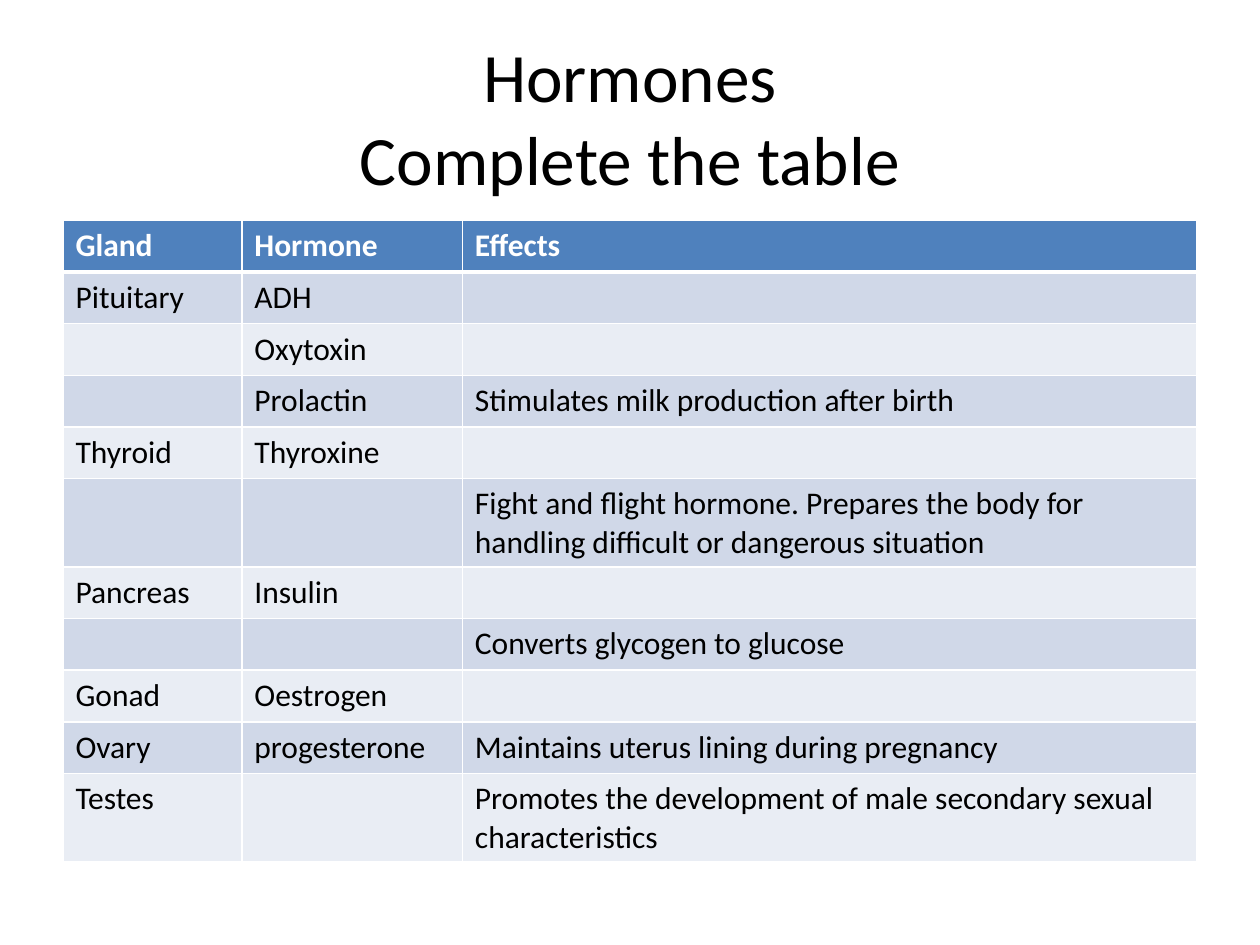
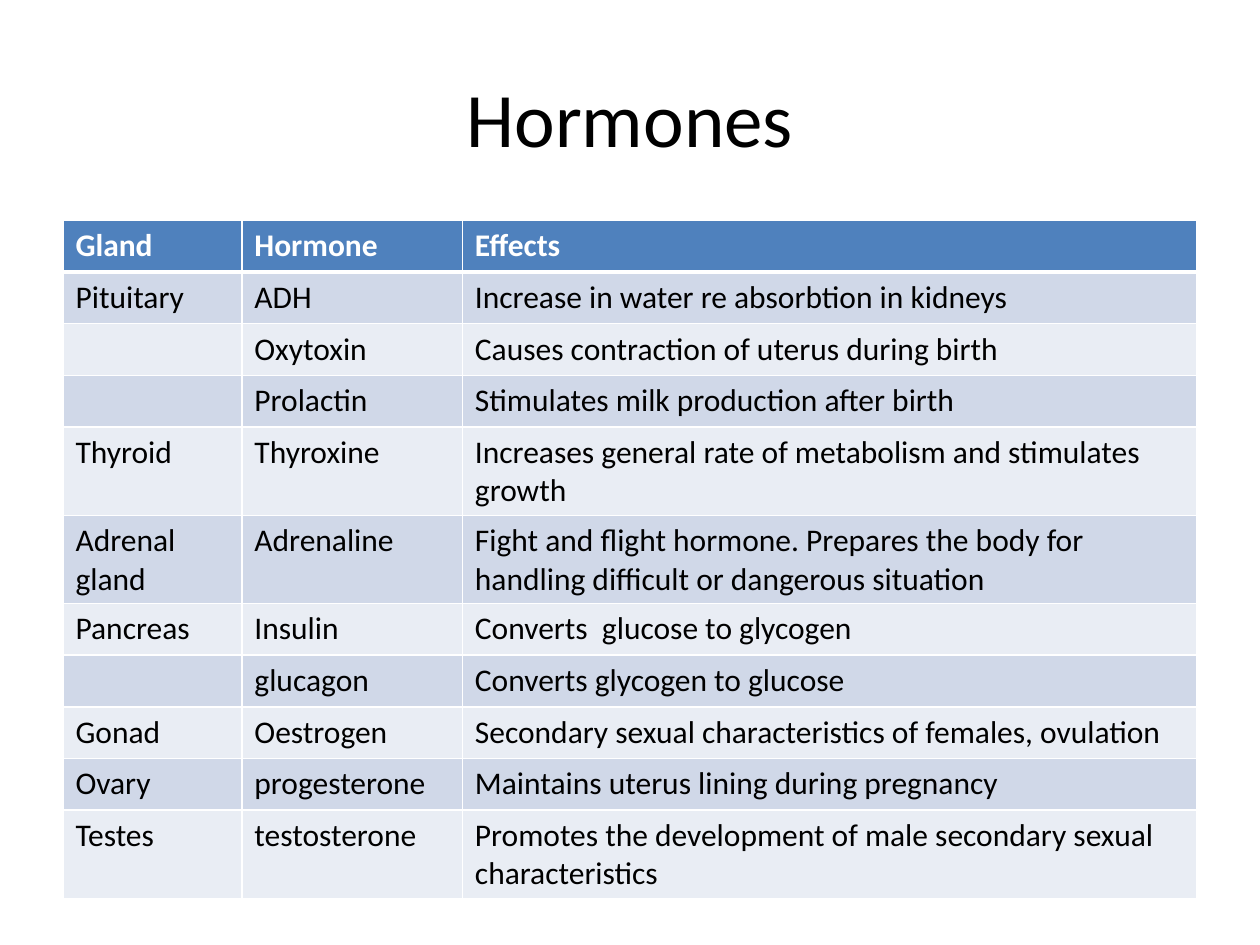
from dataclasses import dataclass

from lxml.etree import SubElement
from pptx import Presentation
from pptx.dml.color import RGBColor as Color
from pptx.enum.text import MSO_ANCHOR as Anchor, PP_ALIGN as Align
from pptx.oxml.ns import qn
from pptx.util import Inches, Pt


@dataclass(frozen=True)
class Theme:
    font: str = "Calibri"
    text: str = "000000"
    header_text: str = "FFFFFF"
    header_fill: str = "4F81BD"
    odd_fill: str = "D0D8E8"
    even_fill: str = "E9EDF4"
    border: str = "FFFFFF"
    thin: float = 1
    thick: float = 3
    table_size: float = 18


theme = Theme()

# Grid, in shares of the slide's size
WIDTH, HEIGHT = Inches(10), Inches(7.5)
MARGIN = round(WIDTH * 0.05)
CONTENT_WIDTH = WIDTH - 2 * MARGIN
TITLE_TOP, TITLE_HEIGHT = round(HEIGHT * 0.04), round(HEIGHT / 6)
TABLE_TOP = round(HEIGHT * 0.2333)
ROW_HEIGHT = Inches(0.41)
COLUMN_WIDTHS = [Inches(1.42), Inches(1.75), Inches(5.83)]

# Complete table of glands, hormones and effects
HORMONES = [
    ("Gland", "Hormone", "Effects"),
    ("Pituitary", "ADH", "Increase in water re absorbtion in kidneys"),
    ("", "Oxytoxin", "Causes contraction of uterus during birth"),
    ("", "Prolactin", "Stimulates milk production after birth"),
    ("Thyroid", "Thyroxine",
     "Increases general rate of metabolism and stimulates growth"),
    ("Adrenal gland", "Adrenaline",
     "Fight and flight hormone. Prepares the body for handling difficult "
     "or dangerous situation"),
    ("Pancreas", "Insulin", "Converts  glucose to glycogen"),
    ("", "glucagon", "Converts glycogen to glucose"),
    ("Gonad", "Oestrogen",
     "Secondary sexual characteristics of females, ovulation"),
    ("Ovary", "progesterone", "Maintains uterus lining during pregnancy"),
    ("Testes", "testosterone",
     "Promotes the development of male secondary sexual characteristics"),
]

# Answers the pupils fill in, as (row, column)
QUESTIONS = {(1, 2), (2, 2), (4, 2), (5, 0), (5, 1), (6, 2), (7, 1),
             (8, 2), (10, 1)}

# Title, title size and blanked cells of each slide
SLIDES = [
    ("Hormones\nComplete the table", 39.6, QUESTIONS),
    ("Hormones", 44, set()),
]


def style_paragraph(paragraph, size, color, bold=False):
    for run in paragraph.runs:
        run.font.name = theme.font
        run.font.size = Pt(size)
        run.font.bold = bold
        run.font.color.rgb = Color.from_string(color)


def add_border(cell, side, width):
    line = SubElement(cell._tc.get_or_add_tcPr(), qn(f"a:ln{side}"),
                      w=str(Pt(width)))
    fill = SubElement(line, qn("a:solidFill"))
    SubElement(fill, qn("a:srgbClr"), val=theme.border)


presentation = Presentation()
presentation.slide_width, presentation.slide_height = WIDTH, HEIGHT
blank_layout = presentation.slide_layouts[6]

for title, title_size, blanks in SLIDES:
    slide = presentation.slides.add_slide(blank_layout)

    # Title
    title_box = slide.shapes.add_textbox(MARGIN, TITLE_TOP, CONTENT_WIDTH,
                                         TITLE_HEIGHT)
    title_box.text_frame.word_wrap = True
    title_box.text_frame.vertical_anchor = Anchor.MIDDLE
    paragraph = title_box.text_frame.paragraphs[0]
    paragraph.text = title
    paragraph.alignment = Align.CENTER
    style_paragraph(paragraph, title_size, theme.text)

    # Table
    table = slide.shapes.add_table(
        len(HORMONES), len(COLUMN_WIDTHS), MARGIN, TABLE_TOP, CONTENT_WIDTH,
        ROW_HEIGHT * len(HORMONES)).table
    for column, width in zip(table.columns, COLUMN_WIDTHS):
        column.width = width

    for row_index, entries in enumerate(HORMONES):
        table.rows[row_index].height = ROW_HEIGHT
        is_header = row_index == 0
        if is_header:
            row_fill, text_color = theme.header_fill, theme.header_text
        else:
            row_fill = theme.odd_fill if row_index % 2 else theme.even_fill
            text_color = theme.text

        for column_index, entry in enumerate(entries):
            cell = table.cell(row_index, column_index)
            # The thick rule lies between the header and the first row
            top = theme.thick if row_index == 1 else theme.thin
            bottom = theme.thick if is_header else theme.thin
            for side, width in zip("LRTB",
                                   (theme.thin, theme.thin, top, bottom)):
                add_border(cell, side, width)
            cell.fill.solid()
            cell.fill.fore_color.rgb = Color.from_string(row_fill)
            if (row_index, column_index) not in blanks:
                cell.text_frame.text = entry
                style_paragraph(cell.text_frame.paragraphs[0],
                                theme.table_size, text_color, is_header)

presentation.save("out.pptx")
